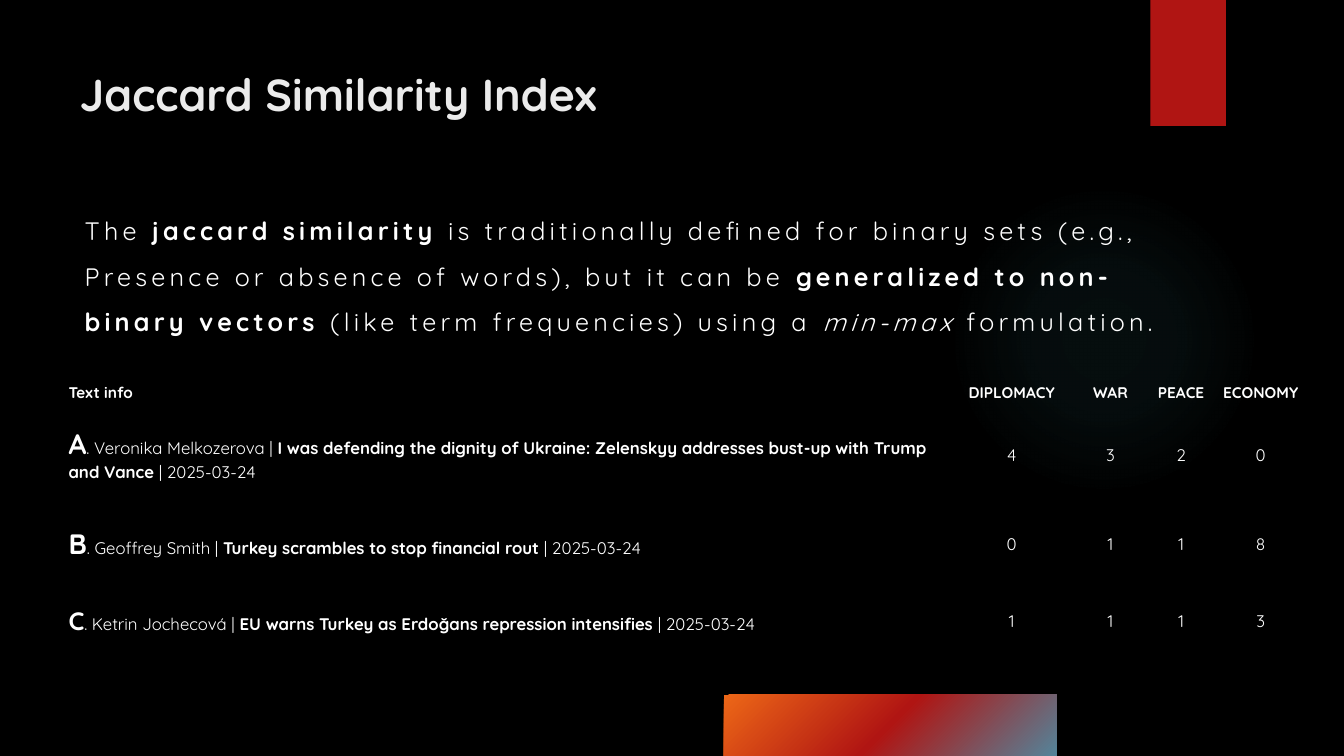
from dataclasses import dataclass

from pptx import Presentation
from pptx.dml.color import RGBColor
from pptx.enum import shapes, text
from pptx.oxml import ns, parse_xml
from pptx import util as u

PX = 9144  # EMU per px, 100 px to the inch
FONT = "Quicksand"
COLORS = {
    "black": "000000", "white": "FFFFFF", "title": "EBEBEB", "red": "B01513",
    "teal": "50B9C1", "blue": "54849A", "orange": "ED6717",
}
NO_STYLE_NO_GRID = "{2D5ABB26-0587-4C30-8999-92F81FD0307C}"


@dataclass
class Span:
    text: str
    size: int = 12
    bold: bool = False
    italic: bool = False
    color: str = "white"
    spacing: int = 0


@dataclass
class Stop:
    position: int
    color: str
    opacity: int = 100


@dataclass
class Decor:
    kind: int
    box: tuple[int, int, int, int]
    stops: list[Stop]
    center: tuple[int, int, int, int] = (50, 50, 50, 50)


@dataclass
class Article:
    letter: str
    letter_size: int
    author: str
    headline: str
    counts: tuple[int, ...]
    date: str = "2025-03-24"

    def spans(self) -> list[Span]:
        return [
            Span(self.letter, self.letter_size, bold=True),
            Span(f". {self.author} | "),
            Span(self.headline, bold=True),
            Span(f" | {self.date}"),
        ]


DECORS = [
    Decor(shapes.MSO_SHAPE.OVAL, (941, 183, 308, 308),
          [Stop(0, "teal", 7), Stop(36, "teal", 6), Stop(69, "teal", 0)]),
    Decor(shapes.MSO_SHAPE.RECTANGLE, (1141, 0, 75, 125), [Stop(0, "red")]),
    Decor(shapes.MSO_SHAPE.RECTANGLE, (718, 689, 330, 61),
          [Stop(0, "blue"), Stop(50, "red"), Stop(100, "orange")], (100, 100, 0, 0)),
]
DEFINITION = [
    Span("The "),
    Span("jaccard similarity", bold=True),
    Span(" is traditionally defined for binary sets (e.g., Presence or absence "
         "of words), but it can be "),
    Span("generalized to non-binary vectors", bold=True),
    Span(" (like term frequencies) using a "),
    Span("min-max", italic=True),
    Span(" formulation."),
]
HEADERS = ["Text info", "DIPLOMACY", "WAR", "PEACE", "ECONOMY"]
ARTICLES = [
    Article("A", 20, "Veronika Melkozerova",
            "I was defending the dignity of Ukraine: Zelenskyy addresses "
            "bust-up with Trump and Vance", (4, 3, 2, 0)),
    Article("B", 20, "Geoffrey Smith",
            "Turkey scrambles to stop financial rout", (0, 1, 1, 8)),
    Article("C", 18, "Ketrin Jochecová",
            "EU warns Turkey as Erdoğans repression intensifies", (1, 1, 1, 3)),
]
COLUMN_WIDTHS = [882, 117, 79, 61, 97]
ROW_HEIGHTS = [15, 100, 77, 77]


def px(length: int) -> u.Emu:
    return u.Emu(length * PX)


def set_all(target, values: dict) -> None:
    for name, value in values.items():
        setattr(target, name, value)


def write(para, spans: list[Span]) -> None:
    for span in spans:
        run = para.add_run()
        run.text = span.text
        set_all(run.font, {"name": FONT, "size": u.Pt(span.size),
                           "bold": span.bold, "italic": span.italic})
        run.font.color.rgb = RGBColor.from_string(COLORS[span.color])
        if span.spacing:
            run.font._element.set("spc", str(span.spacing * 100))


def set_radial_fill(shape, decor: Decor) -> None:
    stops = "".join(
        f'<a:gs pos="{stop.position * 1000}"><a:srgbClr val="{COLORS[stop.color]}">'
        f'<a:alpha val="{stop.opacity * 1000}"/></a:srgbClr></a:gs>'
        for stop in decor.stops)
    edges = " ".join(f'{side}="{value * 1000}"' for side, value in zip("ltrb", decor.center))
    shape.fill.gradient()
    properties = shape._element.spPr
    properties.replace(properties.find(ns.qn("a:gradFill")), parse_xml(
        f'<a:gradFill {ns.nsdecls("a")} rotWithShape="1"><a:gsLst>{stops}</a:gsLst>'
        f'<a:path path="circle"><a:fillToRect {edges}/></a:path></a:gradFill>'))


def draw_decor(page, decor: Decor) -> None:
    shape = page.shapes.add_shape(decor.kind, *map(px, decor.box))
    shape.shadow.inherit = False
    shape.line.fill.background()
    if len(decor.stops) > 1:
        set_radial_fill(shape, decor)
    else:
        shape.fill.solid()
        shape.fill.fore_color.rgb = RGBColor.from_string(COLORS[decor.stops[0].color])


def fill_placeholder(page, box, place: tuple[int, int, int, int], anchor,
                     spans: list[Span], line_spacing: float):
    set_all(box, dict(zip(("left", "top", "width", "height"), map(px, place))))
    set_all(box.text_frame, {"word_wrap": True, "vertical_anchor": anchor,
                             "auto_size": text.MSO_AUTO_SIZE.NONE})
    para = box.text_frame.paragraphs[0]
    set_all(para, {"alignment": text.PP_ALIGN.LEFT, "space_before": u.Pt(0),
                   "line_spacing": line_spacing})
    write(para, spans)
    page.shapes._spTree.append(box._element)  # bring in front of the decoration
    return para


def draw_table(page) -> None:
    rows = [[[Span(header, 11, bold=True)] for header in HEADERS]]
    rows += [[article.spans()] + [[Span(str(count))] for count in article.counts]
             for article in ARTICLES]
    frame = page.shapes.add_table(len(rows), len(HEADERS), px(63), px(378),
                                  px(sum(COLUMN_WIDTHS)), px(sum(ROW_HEIGHTS)))
    table = frame.table
    set_all(table, {"first_row": False, "horz_banding": False})
    table._tbl.tblPr.find(ns.qn("a:tableStyleId")).text = NO_STYLE_NO_GRID
    for column, width in zip(table.columns, COLUMN_WIDTHS):
        column.width = px(width)
    for row, height, contents in zip(table.rows, ROW_HEIGHTS, rows):
        row.height = px(height)
        for index, (cell, spans) in enumerate(zip(row.cells, contents)):
            cell.fill.background()
            set_all(cell, {"vertical_anchor": text.MSO_ANCHOR.MIDDLE,
                           "margin_left": px(5), "margin_right": px(5),
                           "margin_top": px(2), "margin_bottom": px(2)})
            para = cell.text_frame.paragraphs[0]
            para.alignment = text.PP_ALIGN.CENTER if index else text.PP_ALIGN.LEFT
            write(para, spans)


def main() -> None:
    deck = Presentation()
    set_all(deck, {"slide_width": px(1333), "slide_height": px(750)})
    page = deck.slides.add_slide(deck.slide_layouts[1])
    page.background.fill.solid()
    page.background.fill.fore_color.rgb = RGBColor.from_string(COLORS["black"])

    # Decoration
    for decor in DECORS:
        draw_decor(page, decor)

    # Title
    fill_placeholder(page, page.shapes.title, (69, 23, 1097, 102), text.MSO_ANCHOR.BOTTOM,
                     [Span("Jaccard Similarity Index", 32, bold=True, color="title")], 1.0)

    # Term counts per article
    draw_table(page)

    # Definition, without bullet
    for span in DEFINITION:
        set_all(span, {"size": 18, "spacing": 3})
    para = fill_placeholder(page, page.placeholders[1], (74, 194, 1127, 106),
                            text.MSO_ANCHOR.TOP, DEFINITION, 1.5)
    properties = para._p.get_or_add_pPr()
    properties.set("marL", "0")
    properties.set("indent", "0")
    properties.append(parse_xml(f'<a:buNone {ns.nsdecls("a")}/>'))

    deck.save("out.pptx")


if __name__ == "__main__":
    main()
